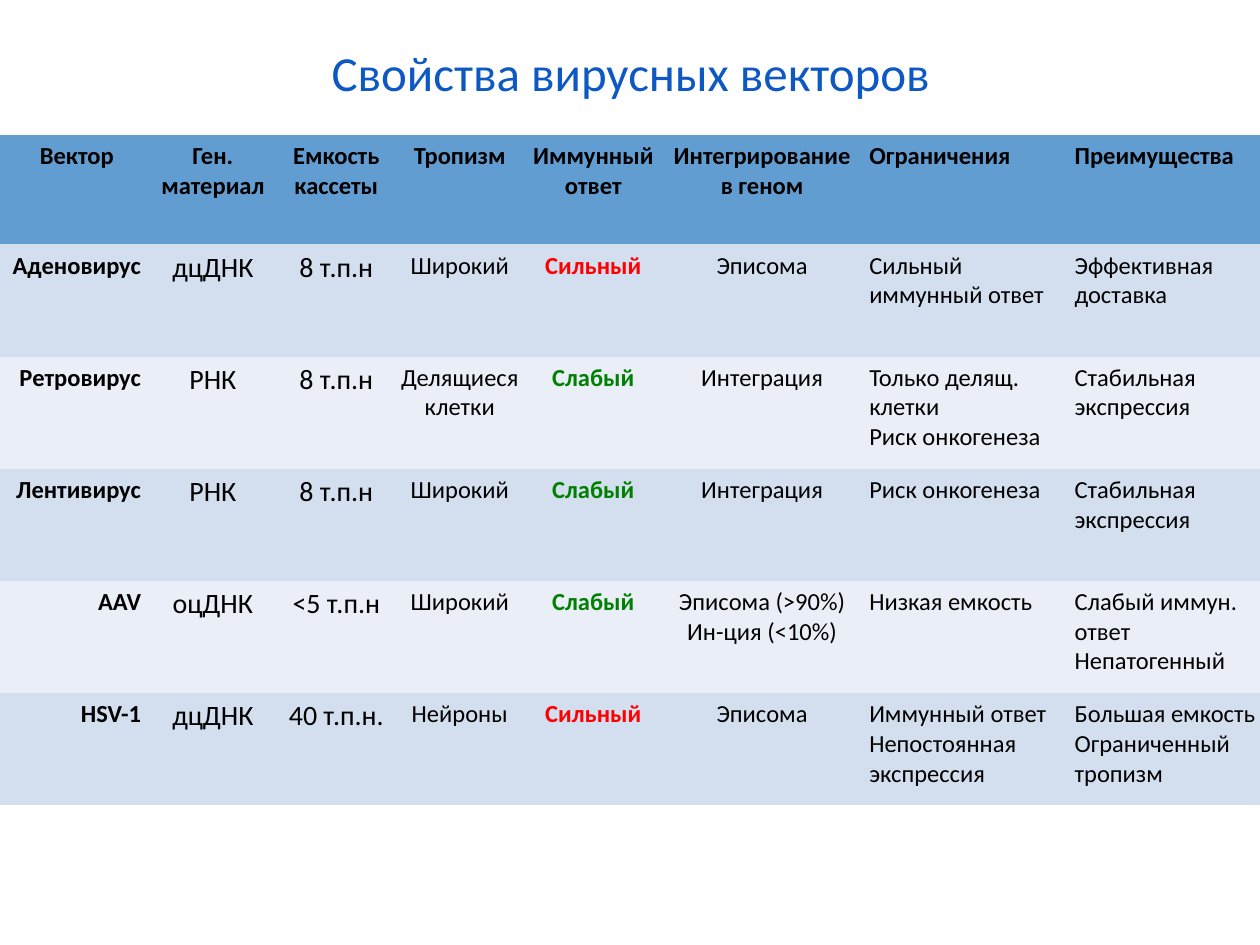
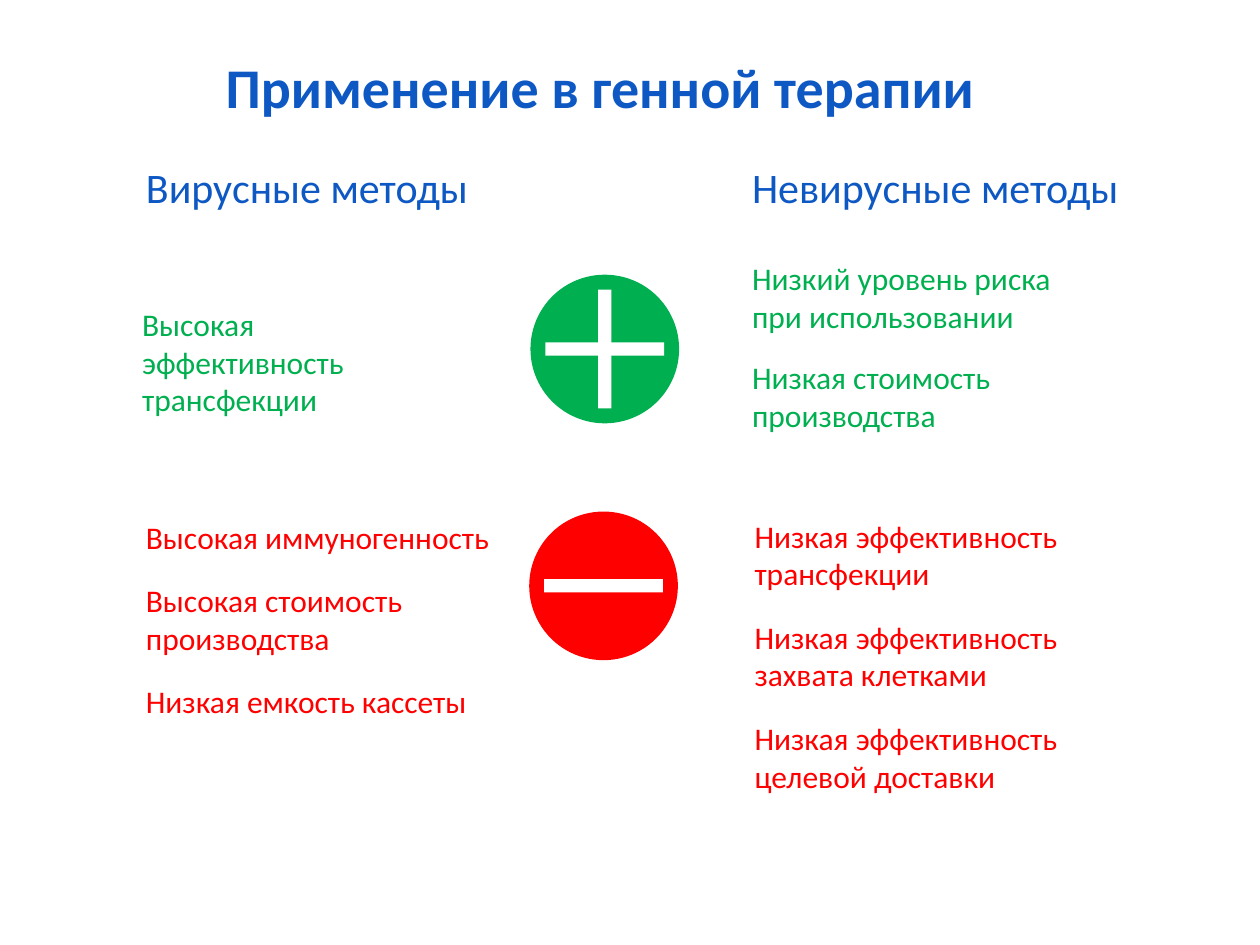
from dataclasses import dataclass

from pptx import Presentation
from pptx.dml.color import RGBColor
from pptx.enum.shapes import MSO_SHAPE
from pptx.enum.text import MSO_ANCHOR, MSO_AUTO_SIZE, PP_ALIGN
from pptx.util import Inches, Pt

COLUMNS, ROWS = 100, 75
SLIDE_WIDTH, SLIDE_HEIGHT = Inches(10), Inches(7.5)
PLAIN_TABLE_STYLE = "{2D5ABB26-0587-4C30-8999-92F81FD0307C}"


@dataclass(frozen=True)
class Theme:
    font: str = "Calibri"
    heading: str = "0E58C4"
    text: str = "000000"
    paper: str = "FFFFFF"
    header_band: str = "629DD1"
    odd_band: str = "D3DFEE"
    even_band: str = "EAEFF7"
    strong: str = "FF0000"
    weak: str = "008000"
    advantage: str = "00B050"
    drawback: str = "FF0000"
    table_title_size: int = 28
    comparison_title_size: int = 32
    method_size: int = 24
    point_size: int = 18
    cell_size: int = 14
    material_size: int = 16


THEME = Theme()


@dataclass(frozen=True)
class Box:
    left: float
    top: float
    width: float
    height: float

    def emu(self):
        return (across(self.left), down(self.top), across(self.width), down(self.height))

    def centred(self, width_share, height_share):
        width, height = self.width * width_share, self.height * height_share
        return Box(self.left + (self.width - width) / 2,
                   self.top + (self.height - height) / 2, width, height)


def across(columns):
    return round(SLIDE_WIDTH * columns / COLUMNS)


def down(rows):
    return round(SLIDE_HEIGHT * rows / ROWS)


def write_line(paragraph, line, size, color, bold=False, align=PP_ALIGN.LEFT):
    paragraph.alignment = align
    run = paragraph.add_run()
    run.text = line
    run.font.name = THEME.font
    run.font.size = Pt(size)
    run.font.bold = bold
    run.font.color.rgb = RGBColor.from_string(color)


def write_items(frame, items, size, color, bold=False, align=PP_ALIGN.LEFT, gap=0):
    paragraph = frame.paragraphs[0]
    for item_number, item in enumerate(items):
        for line_number, line in enumerate(item):
            if item_number or line_number:
                paragraph = frame.add_paragraph()
            if item_number and not line_number:
                paragraph.space_before = Pt(gap)
            write_line(paragraph, line, size, color, bold, align)


def titled_slide(deck, title, box, size, bold, align, wrap):
    slide = deck.slides.add_slide(deck.slide_layouts[5])
    heading = slide.shapes.title
    heading.left, heading.top, heading.width, heading.height = box.emu()
    frame = heading.text_frame
    frame.auto_size = MSO_AUTO_SIZE.NONE
    frame.vertical_anchor = MSO_ANCHOR.TOP
    frame.word_wrap = wrap
    write_line(frame.paragraphs[0], title, size, THEME.heading, bold, align)
    return slide


def add_points(slide, box, items, size, color, gap=0):
    frame = slide.shapes.add_textbox(*box.emu()).text_frame
    frame.word_wrap = False
    write_items(frame, items, size, color, gap=gap)


def add_solid(slide, outline, box, color):
    solid = slide.shapes.add_shape(outline, *box.emu())
    solid.shadow.inherit = False
    solid.fill.solid()
    solid.fill.fore_color.rgb = RGBColor.from_string(color)
    solid.line.fill.background()


def add_sign(slide, box, color, strokes):
    add_solid(slide, MSO_SHAPE.OVAL, box, color)
    for width_share, height_share in strokes:
        add_solid(slide, MSO_SHAPE.RECTANGLE,
                  box.centred(width_share, height_share), THEME.paper)


@dataclass(frozen=True)
class Property:
    header: str
    width: float
    align: PP_ALIGN = PP_ALIGN.CENTER
    size: int = THEME.cell_size
    bold: bool = False
    header_margin: float = 0
    margin: float = 0


PROPERTIES = [
    Property("Вектор", 12.2, PP_ALIGN.RIGHT, bold=True, margin=1),
    Property("Ген. материал", 9.4, size=THEME.material_size, margin=1),
    Property("Емкость\nкассеты", 10.2, size=THEME.material_size, margin=1),
    Property("Тропизм", 9.4),
    Property("Иммунный ответ", 11.8, bold=True, margin=1),
    Property("Интегрирование в геном", 15),
    Property("Ограничения", 17.3, PP_ALIGN.LEFT, header_margin=1, margin=1),
    Property("Преимущества", 14.9, PP_ALIGN.LEFT),
]

VECTORS = [
    ("Аденовирус", "дцДНК", "8 т.п.н", "Широкий", "Сильный", "Эписома",
     "Сильный иммунный ответ", "Эффективная доставка"),
    ("Ретровирус", "РНК", "8 т.п.н", "Делящиеся клетки", "Слабый", "Интеграция",
     "Только делящ. клетки\nРиск онкогенеза", "Стабильная\nэкспрессия"),
    ("Лентивирус", "РНК", "8 т.п.н", "Широкий", "Слабый", "Интеграция",
     "Риск онкогенеза", "Стабильная\nэкспрессия"),
    ("AAV", "оцДНК", "<5 т.п.н", "Широкий", "Слабый", "Эписома (>90%)\nИн-ция (<10%)",
     "Низкая емкость", "Слабый иммун. ответ\nНепатогенный"),
    ("HSV-1", "дцДНК", "40 т.п.н.", "Нейроны", "Сильный", "Эписома",
     "Иммунный ответ\nНепостоянная экспрессия", "Большая емкость\nОграниченный тропизм"),
]

RESPONSE_COLORS = {"Сильный": THEME.strong, "Слабый": THEME.weak}


def fill_cell(cell, words, band, margin, size, color, bold, align):
    cell.fill.solid()
    cell.fill.fore_color.rgb = RGBColor.from_string(band)
    cell.margin_left = cell.margin_right = across(margin)
    write_items(cell.text_frame, [words.split("\n")], size, color, bold, align)


def add_vector_table(slide, box, header_height, row_height):
    holder = slide.shapes.add_table(len(VECTORS) + 1, len(PROPERTIES), *box.emu())
    table = holder.table
    table.first_row = table.horz_banding = False
    table._tbl.tblPr[0].text = PLAIN_TABLE_STYLE
    for number, row in enumerate(table.rows):
        row.height = down(row_height if number else header_height)
    for column, prop in enumerate(PROPERTIES):
        table.columns[column].width = across(prop.width)
        header_align = PP_ALIGN.LEFT if prop.align == PP_ALIGN.LEFT else PP_ALIGN.CENTER
        fill_cell(table.cell(0, column), prop.header, THEME.header_band,
                  prop.header_margin, THEME.cell_size, THEME.text, True, header_align)
        for number, vector in enumerate(VECTORS, 1):
            words = vector[column]
            band = THEME.odd_band if number % 2 else THEME.even_band
            fill_cell(table.cell(number, column), words, band, prop.margin, prop.size,
                      RESPONSE_COLORS.get(words, THEME.text), prop.bold, prop.align)
    holder.height = down(box.height)


def vector_slide(deck):
    slide = titled_slide(deck, "Свойства вирусных векторов", Box(10.7, 2.9, 78.7, 5.7),
                         THEME.table_title_size, False, PP_ALIGN.CENTER, True)
    add_vector_table(slide, Box(0, 10.7, 100.3, 54.8), 8.7, 8.9)


HORIZONTAL, VERTICAL = (0.8, 0.09), (0.09, 0.8)

METHODS = [
    (Box(10.6, 12.3, 27.8, 5), "Вирусные методы"),
    (Box(58.7, 12.3, 32.2, 5), "Невирусные методы"),
]

SIGNS = [
    (Box(42.1, 21.8, 11.8, 11.8), THEME.advantage, [VERTICAL, HORIZONTAL]),
    (Box(42, 40.6, 11.8, 11.8), THEME.drawback, [HORIZONTAL]),
]

POINTS = [
    (Box(10.3, 23.7, 27.4, 7.1), THEME.advantage, 0,
     [("Высокая эффективность", "трансфекции")]),
    (Box(58.7, 20.1, 27.2, 15), THEME.advantage, 13.4,
     [("Низкий уровень риска", "при использовании"),
      ("Низкая стоимость", "производства")]),
    (Box(10.6, 40.6, 29.6, 17.2), THEME.drawback, 14.6,
     [("Высокая иммуногенность",),
      ("Высокая стоимость", "производства"),
      ("Низкая емкость кассеты",)]),
    (Box(58.9, 40.5, 26.9, 23.2), THEME.drawback, 14.6,
     [("Низкая эффективность", "трансфекции"),
      ("Низкая эффективность", "захвата клетками"),
      ("Низкая эффективность", "целевой доставки")]),
]


def comparison_slide(deck):
    slide = titled_slide(deck, "Применение в генной терапии", Box(16.9, 3.7, 62.1, 6.4),
                         THEME.comparison_title_size, True, PP_ALIGN.LEFT, False)
    for box, method in METHODS:
        add_points(slide, box, [(method,)], THEME.method_size, THEME.heading)
    for box, color, strokes in SIGNS:
        add_sign(slide, box, color, strokes)
    for box, color, gap, items in POINTS:
        add_points(slide, box, items, THEME.point_size, color, gap)


def main():
    deck = Presentation()
    deck.slide_width, deck.slide_height = SLIDE_WIDTH, SLIDE_HEIGHT
    vector_slide(deck)
    comparison_slide(deck)
    deck.save("out.pptx")


if __name__ == "__main__":
    main()
